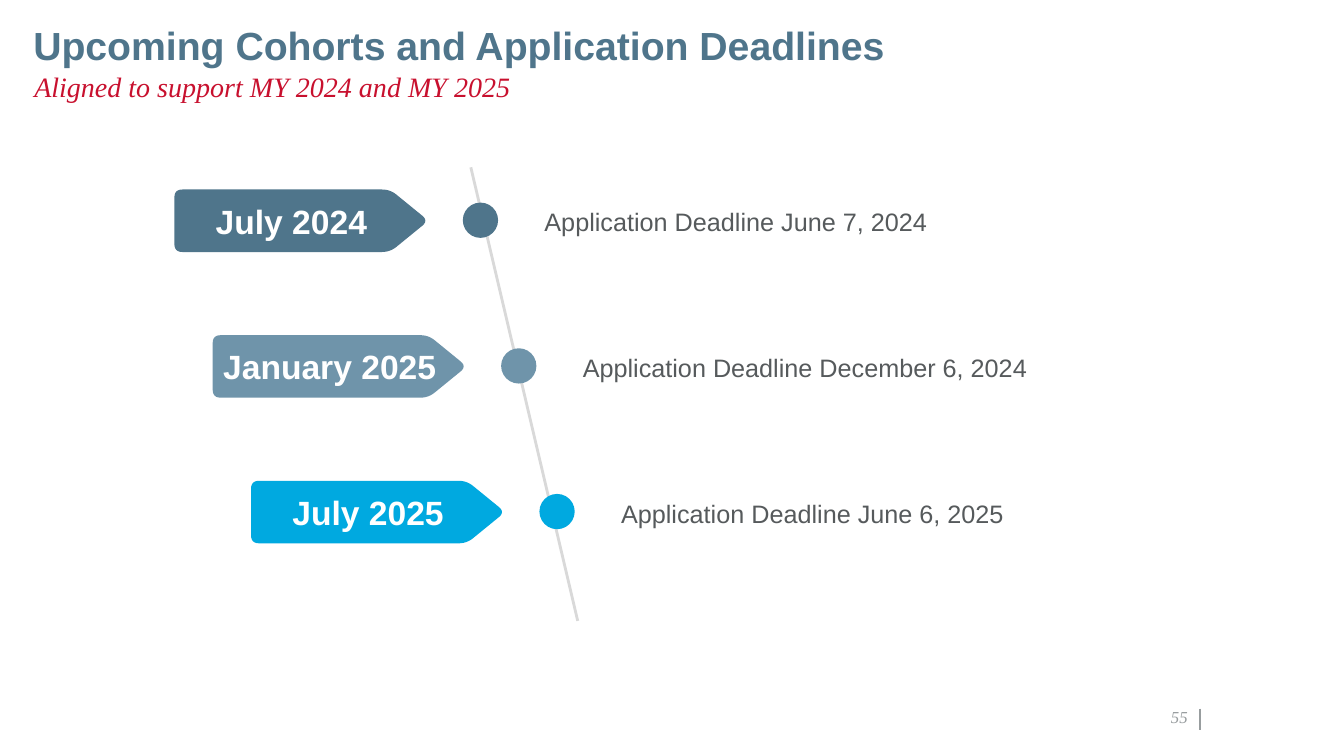
from math import dist

from pptx import Presentation
from pptx.dml.color import RGBColor
from pptx.enum.shapes import MSO_CONNECTOR as Connector, MSO_SHAPE as Shape
from pptx.enum.text import MSO_ANCHOR as Anchor, MSO_AUTO_SIZE as AutoSize, PP_ALIGN as Align
from pptx.oxml.ns import qn
from pptx.util import Inches, Pt
from lxml.etree import SubElement

STEEL = RGBColor(0x4F, 0x75, 0x8B)
MIST = RGBColor(0x6F, 0x94, 0xAA)
SKY = RGBColor(0x00, 0xA9, 0xE0)
CRIMSON = RGBColor(0xC8, 0x10, 0x2E)
SLATE = RGBColor(0x56, 0x5A, 0x5C)
SILVER = RGBColor(0x98, 0x9D, 0x9F)
PALE = RGBColor(0xD9, 0xD9, 0xD9)
WHITE = RGBColor(0xFF, 0xFF, 0xFF)

SANS, SERIF = "Arial", "Times New Roman"
COLUMNS, ROWS = 133.3, 75
TAG_CORNERS = [(0, 0), (21.4, 0), (25.2, 3.1), (21.4, 6.2), (0, 6.2)]
COHORTS = [
    ("July 2024", 17.2, "Application Deadline June 7, 2024", STEEL),
    ("January 2025", 23.4, "Application Deadline December 6, 2024", MIST),
    ("July 2025", 17.2, "Application Deadline June 6, 2025", SKY),
]


def rounded(corners, cut=0.8, steps=6):
    """Return the outline of a polygon with its corners softened."""
    points = []
    for index, corner in enumerate(corners):
        before, after = corners[index - 1], corners[(index + 1) % len(corners)]
        start, end = (
            [c + (o - c) * cut / dist(corner, other) for c, o in zip(corner, other)]
            for other in (before, after)
        )
        for step in range(steps + 1):
            t = step / steps
            points.append(tuple(
                (1 - t) ** 2 * s + 2 * t * (1 - t) * c + t ** 2 * e
                for s, c, e in zip(start, corner, end)
            ))
    return points


class Page:
    """Draw elements on one slide, measured in grid columns and rows."""

    def __init__(self, deck):
        self.slide = deck.slides.add_slide(deck.slide_layouts[5])
        self.column = deck.slide_width / COLUMNS
        self.row = deck.slide_height / ROWS

    def place(self, column, row):
        """Turn a grid position or size into slide lengths."""
        return round(column * self.column), round(row * self.row)

    def fill_text(self, box, text, size, color, font=SANS, bold=False, italic=False,
                  align=Align.LEFT, anchor=Anchor.TOP, insets=(0, 0, 0, 0),
                  spacing=1.0, after=0, wrap=True, fit=AutoSize.NONE):
        """Fill a box with one styled paragraph."""
        frame = box.text_frame
        frame.text = text
        frame.word_wrap, frame.auto_size, frame.vertical_anchor = wrap, fit, anchor
        (frame.margin_left, frame.margin_top,
         frame.margin_right, frame.margin_bottom) = map(Inches, insets)
        para = frame.paragraphs[0]
        para.alignment, para.line_spacing = align, spacing
        para.space_before, para.space_after = Pt(0), Pt(after)
        span = para.runs[0].font
        span.name, span.size, span.bold, span.italic = font, Pt(size), bold, italic
        span.color.rgb = color

    def title(self, text, left, top, width, height):
        """Move and format the title placeholder."""
        box = self.slide.shapes.title
        box.left, box.top = self.place(left, top)
        box.width, box.height = self.place(width, height)
        self.fill_text(box, text, 28, STEEL, bold=True, insets=(0, 0, 0.1, 0), spacing=0.9)

    def text(self, text, left, top, width, height, size, color, **style):
        """Add a text box."""
        box = self.slide.shapes.add_textbox(*self.place(left, top), *self.place(width, height))
        self.fill_text(box, text, size, color, **style)

    def line(self, start, end, color, weight):
        """Add a straight line without a shadow."""
        line = self.slide.shapes.add_connector(
            Connector.STRAIGHT, *self.place(*start), *self.place(*end))
        line.line.color.rgb, line.line.width = color, Pt(weight)
        SubElement(line._element.spPr, qn("a:effectLst"))

    def paint(self, shape, color):
        """Give a shape a flat fill and no outline or shadow."""
        shape.shadow.inherit = False
        shape.fill.solid()
        shape.fill.fore_color.rgb = color
        shape.line.fill.background()

    def dot(self, left, top, size, color):
        """Add a timeline marker."""
        dot = self.slide.shapes.add_shape(
            Shape.OVAL, *self.place(left, top), *self.place(size, size))
        self.paint(dot, color)

    def tag(self, left, top, color):
        """Add a pointed tag with soft corners."""
        points = [self.place(left + x, top + y) for x, y in rounded(TAG_CORNERS)]
        outline = self.slide.shapes.build_freeform(*points[0])
        outline.add_line_segments(points[1:], close=True)
        self.paint(outline.convert_to_shape(), color)

    def cohort(self, left, top, name, name_width, deadline, color):
        """Add one cohort: marker, tag, name and deadline."""
        self.dot(left + 28.6, top + 1.3, 3.5, color)
        self.tag(left, top, color)
        self.text(name, left + 11.6 - name_width / 2, top + 0.6, name_width, 5, 24, WHITE,
                  bold=True, align=Align.CENTER, anchor=Anchor.MIDDLE,
                  insets=(0.1, 0.05, 0.1, 0.05), wrap=False, fit=AutoSize.SHAPE_TO_FIT_TEXT)
        self.text(deadline, left + 36.2, top + 1, 45.5, 3.8, 18, SLATE,
                  anchor=Anchor.MIDDLE, insets=(0.05, 0.03, 0.05, 0.03),
                  spacing=1.2, fit=AutoSize.SHAPE_TO_FIT_TEXT)


def main():
    """Build the cohort timeline slide."""
    deck = Presentation()
    deck.slide_width, deck.slide_height = Inches(13.33), Inches(7.5)
    page = Page(deck)
    page.title("Upcoming Cohorts and Application Deadlines", 3.3, 2.6, 126.7, 4.1)
    page.text("Aligned to support MY 2024 and MY 2025", 3.4, 7.3, 126.7, 3.6, 20, CRIMSON,
              font=SERIF, italic=True, spacing=0.9, after=6)
    page.line((46.7, 16.6), (57.3, 61.6), PALE, 2)
    for index, cohort in enumerate(COHORTS):
        page.cohort(17.3 + 3.8 * index, 18.8 + 14.45 * index, *cohort)
    page.line((119, 70.3), (119, 72.4), SILVER, 1)
    page.text("55", 109.9, 70.3, 7.9, 1.8, 12, SILVER, font=SERIF, italic=True,
              align=Align.RIGHT, anchor=Anchor.BOTTOM)
    deck.save("out.pptx")


if __name__ == "__main__":
    main()
